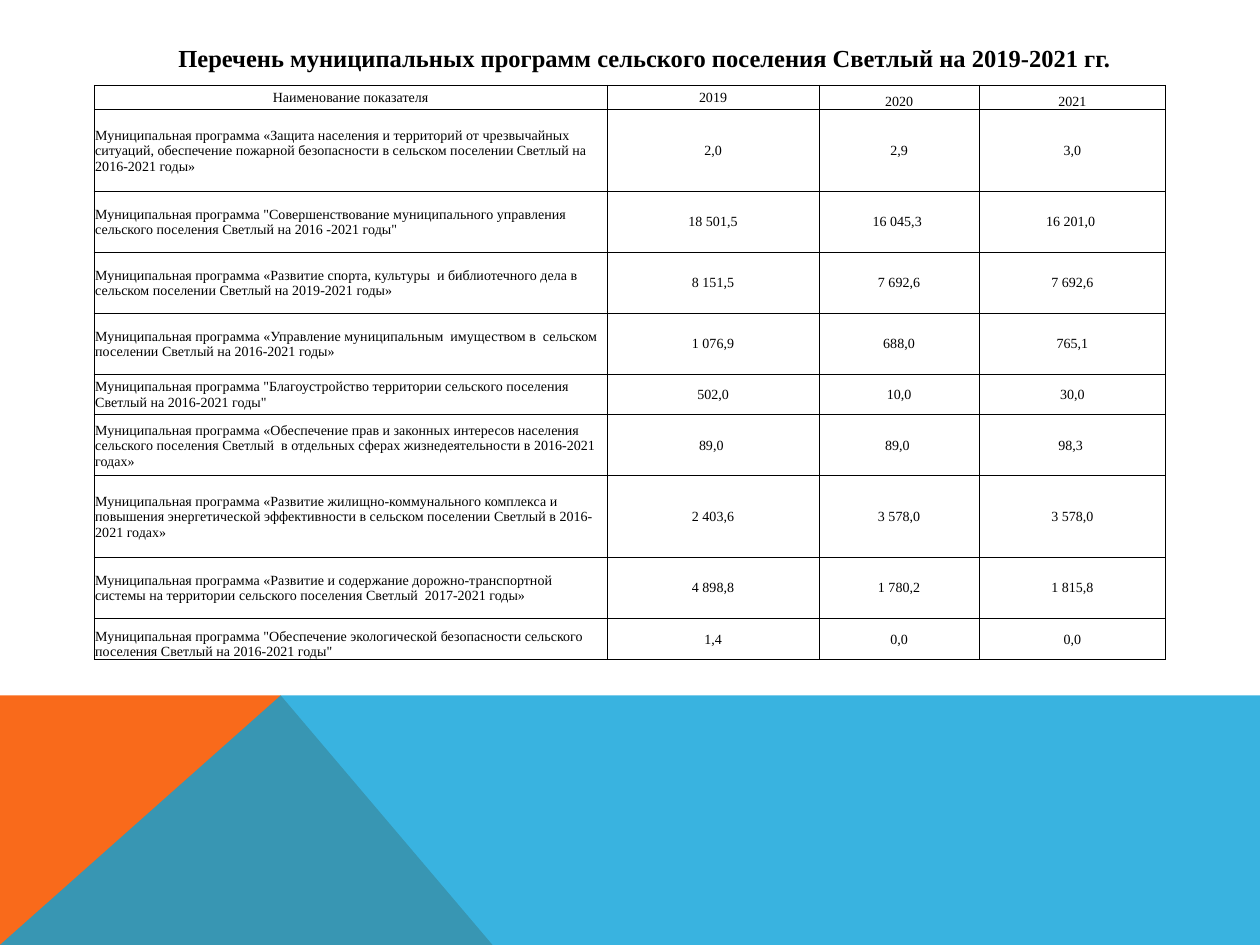
from dataclasses import dataclass

from lxml.etree import SubElement
from pptx import Presentation
from pptx.dml.color import RGBColor as Rgb
from pptx.enum.text import MSO_ANCHOR as Anchor, MSO_AUTO_SIZE as AutoSize, PP_ALIGN as Align
from pptx.oxml.ns import qn
from pptx.util import Cm, Pt


@dataclass(frozen=True)
class Theme:
    font: str = "Times New Roman"
    ink: str = "000000"
    orange: str = "F96A1B"
    blue: str = "08A1D9"
    title_size: float = 14
    table_size: float = 8
    thin: float = 0.5
    thick: float = 1


class SlideBuilder:
    def __init__(self, slide, theme):
        self.slide = slide
        self.theme = theme

    def style(self, paragraph, size, align, bold=False):
        paragraph.alignment = align
        for run in paragraph.runs:
            run.font.name = self.theme.font
            run.font.size = Pt(size)
            run.font.bold = bold
            run.font.color.rgb = Rgb.from_string(self.theme.ink)

    def polygon(self, points, color, opacity=100):
        corners = [(Cm(x), Cm(y)) for x, y in points]
        builder = self.slide.shapes.build_freeform(*corners[0], scale=1.0)
        builder.add_line_segments(corners[1:], close=True)
        shape = builder.convert_to_shape()
        shape.shadow.inherit = False
        shape.line.fill.background()
        shape.fill.solid()
        shape.fill.fore_color.rgb = Rgb.from_string(color)
        if opacity < 100:
            srgb = shape.fill._xPr.find(".//" + qn("a:srgbClr"))
            SubElement(srgb, qn("a:alpha"), val=str(opacity * 1000))

    def title(self, text, left, top, width, height):
        box = self.slide.shapes.add_textbox(Cm(left), Cm(top), Cm(width), Cm(height))
        frame = box.text_frame
        frame.word_wrap = True
        frame.auto_size = AutoSize.SHAPE_TO_FIT_TEXT
        frame.text = text
        self.style(frame.paragraphs[0], self.theme.title_size, Align.CENTER, bold=True)

    def border(self, cell, left_width):
        properties = cell._tc.get_or_add_tcPr()
        for side in "LRTB":
            width = left_width if side == "L" else self.theme.thin
            line = SubElement(properties, qn(f"a:ln{side}"), w=str(Pt(width)))
            fill = SubElement(line, qn("a:solidFill"))
            SubElement(fill, qn("a:srgbClr"), val=self.theme.ink)

    def cell(self, cell, text, align, anchor, left_width):
        self.border(cell, left_width)
        cell.fill.background()
        cell.margin_left = cell.margin_right = cell.margin_top = Cm(0.02)
        cell.margin_bottom = 0
        cell.vertical_anchor = anchor
        cell.text_frame.text = text
        self.style(cell.text_frame.paragraphs[0], self.theme.table_size, align)

    def table(self, rows, left, top, widths, heights):
        frame = self.slide.shapes.add_table(
            len(rows), len(widths), Cm(left), Cm(top), Cm(sum(widths)), Cm(sum(heights)))
        table = frame.table
        table.first_row = table.horz_banding = False
        for column, width in zip(table.columns, widths):
            column.width = Cm(width)
        for row, height in zip(table.rows, heights):
            row.height = Cm(height)

        last = len(rows) - 1
        bottom_cells = {(0, 2), (0, 3), (last, 0)}
        for r, values in enumerate(rows):
            for c, text in enumerate(values):
                is_program = c == 0 and r > 0
                self.cell(
                    table.cell(r, c), text,
                    Align.LEFT if is_program else Align.CENTER,
                    Anchor.BOTTOM if (r, c) in bottom_cells else Anchor.MIDDLE,
                    self.theme.thick if is_program and r < last else self.theme.thin)


SLIDE_WIDTH, SLIDE_HEIGHT = 25.4, 19.05
BAND_TOP, PEAK = 14.02, 5.66

PROGRAMS = [
    ("Наименование показателя", "2019", "2020", "2021"),
    ("Муниципальная программа «Защита населения и территорий от чрезвычайных ситуаций, "
     "обеспечение пожарной безопасности в сельском поселении Светлый на 2016-2021 годы»",
     "2,0", "2,9", "3,0"),
    ("Муниципальная программа \"Совершенствование муниципального управления "
     "сельского поселения Светлый на 2016 -2021 годы\"",
     "18 501,5", "16 045,3 ", "16 201,0 "),
    ("Муниципальная программа «Развитие спорта, культуры  и библиотечного дела "
     "в сельском поселении Светлый на 2019-2021 годы»",
     "8 151,5", "7 692,6", "7 692,6"),
    ("Муниципальная программа «Управление муниципальным  имуществом в  сельском "
     "поселении Светлый на 2016-2021 годы»",
     "1 076,9", "688,0", "765,1"),
    ("Муниципальная программа \"Благоустройство территории сельского поселения "
     "Светлый на 2016-2021 годы\"",
     "502,0", "10,0", "30,0"),
    ("Муниципальная программа «Обеспечение прав и законных интересов населения  "
     "сельского поселения Светлый  в отдельных сферах жизнедеятельности в 2016-2021 годах»",
     "89,0 ", "89,0 ", "98,3 "),
    ("Муниципальная программа «Развитие жилищно-коммунального комплекса и повышения "
     "энергетической эффективности в сельском поселении Светлый в 2016-2021 годах»",
     "2 403,6", "3 578,0", "3 578,0"),
    ("Муниципальная программа «Развитие и содержание дорожно-транспортной системы "
     "на территории сельского поселения Светлый  2017-2021 годы»",
     "4 898,8", "1 780,2", "1 815,8"),
    ("Муниципальная программа \"Обеспечение экологической безопасности сельского "
     "поселения Светлый на 2016-2021 годы\"",
     "1,4", "0,0", "0,0"),
]
COLUMN_WIDTHS = [10.34, 4.27, 3.23, 3.76]
ROW_HEIGHTS = [0.49, 1.64, 1.23, 1.23, 1.23, 0.82, 1.23, 1.64, 1.23, 0.84]


def main():
    deck = Presentation()
    deck.slide_width, deck.slide_height = Cm(SLIDE_WIDTH), Cm(SLIDE_HEIGHT)
    theme = Theme()
    page = SlideBuilder(deck.slides.add_slide(deck.slide_layouts[6]), theme)

    # Coloured band along the bottom
    page.polygon([(0, SLIDE_HEIGHT), (0, BAND_TOP), (PEAK, BAND_TOP), (9.93, SLIDE_HEIGHT)],
                 theme.orange)
    page.polygon([(0, SLIDE_HEIGHT), (PEAK, BAND_TOP), (SLIDE_WIDTH, BAND_TOP),
                  (SLIDE_WIDTH, SLIDE_HEIGHT)], theme.blue, opacity=80)

    # Heading
    page.title("Перечень муниципальных программ сельского поселения Светлый на 2019-2021 гг.",
               2.1, 0.74, 21.8, 0.86)

    # Programme spending by year
    page.table(PROGRAMS, 1.9, 1.72, COLUMN_WIDTHS, ROW_HEIGHTS)

    deck.save("out.pptx")


if __name__ == "__main__":
    main()
